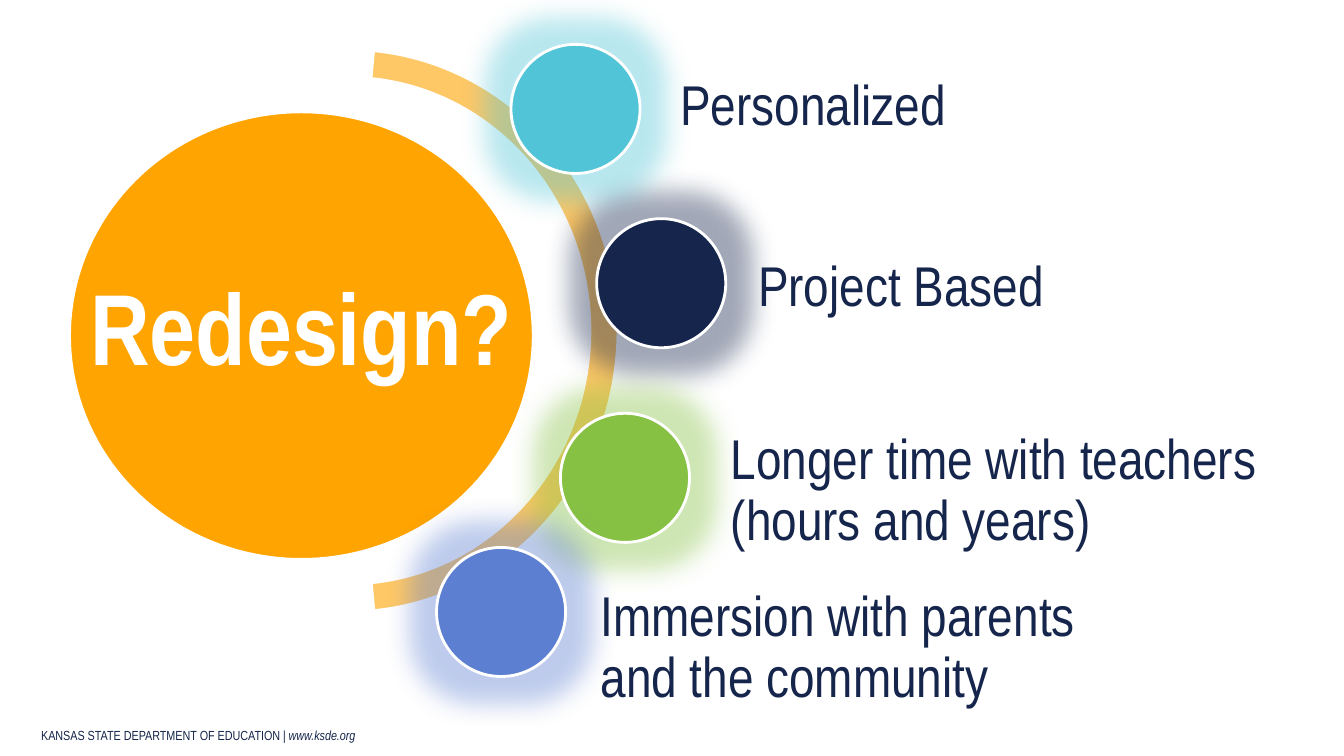
"""Build the Redesign slide: a large titled disc, an arc and four glowing topics."""
from dataclasses import dataclass

from lxml.etree import SubElement
from pptx import Presentation
from pptx.dml.color import RGBColor
from pptx.enum.shapes import MSO_SHAPE
from pptx.enum.text import MSO_ANCHOR, MSO_AUTO_SIZE, PP_ALIGN
from pptx.oxml.ns import qn
from pptx.shapes.autoshape import Shape
from pptx.slide import Slide
from pptx.text.text import TextFrame
from pptx.util import Pt

WHITE = RGBColor(0xFF, 0xFF, 0xFF)
NAVY = RGBColor(0x15, 0x25, 0x4B)
ORANGE = RGBColor(0xFF, 0xA4, 0x00)
LIGHT_ORANGE = RGBColor(0xFF, 0xC8, 0x66)
GREEN = RGBColor(0x86, 0xC1, 0x44)
BLUE = RGBColor(0x5D, 0x7F, 0xD1)
TEAL = RGBColor(0x51, 0xC5, 0xD7)

FONT = "Arial Narrow"
DISC_SIZE = 92.2
LABEL_INSET = 2.9
GLOW_RADIUS = 36


@dataclass(frozen=True)
class Box:
    left: float
    top: float
    width: float
    height: float

    def lengths(self) -> tuple[Pt, Pt, Pt, Pt]:
        return Pt(self.left), Pt(self.top), Pt(self.width), Pt(self.height)


@dataclass(frozen=True)
class Topic:
    text: str
    color: RGBColor
    disc_left: float
    disc_top: float
    label: Box


TITLE_DISC = Box(49.7, 79.9, 331.2, 319.7)
ARC = Box(56.2, 35.3, 385.2, 401.8)
FOOTER = Box(22.3, 515.5, 457.9, 18.7)
TOPICS = [
    Topic("Project Based", NAVY, 426.2, 156.2, Box(538.6, 185, 288, 42.5)),
    Topic("Longer time with teachers (hours and years)", GREEN, 400.3, 295.2,
          Box(519.1, 306.7, 395, 89.3)),
    Topic("Immersion with parents and the community", BLUE, 311.8, 391,
          Box(426.2, 427.7, 347.8, 71.3)),
    Topic("Personalized", TEAL, 365, 31.7, Box(483.1, 55.3, 306, 42.5)),
]


def add_painted(slide: Slide, kind: MSO_SHAPE, box: Box, color: RGBColor) -> Shape:
    s = slide.shapes.add_shape(kind, *box.lengths())
    s.shadow.inherit = False
    s.fill.solid()
    s.fill.fore_color.rgb = color
    s.line.color.rgb = WHITE
    s.line.width = Pt(2)
    return s


def add_glow(s: Shape, color: RGBColor) -> None:
    effects = s.element.spPr.find(qn("a:effectLst"))
    glow = SubElement(effects, qn("a:glow"), rad=str(Pt(GLOW_RADIUS)))
    clr = SubElement(glow, qn("a:srgbClr"), val=str(color))
    SubElement(clr, qn("a:alpha"), val="40000")


def set_frame(tf: TextFrame, inset: float, anchor: MSO_ANCHOR, wrap: bool) -> None:
    tf.auto_size = MSO_AUTO_SIZE.NONE
    tf.word_wrap = wrap
    tf.vertical_anchor = anchor
    tf.margin_left = tf.margin_right = tf.margin_top = tf.margin_bottom = Pt(inset)


def add_run(tf: TextFrame, text: str, size: float, color: RGBColor,
            bold: bool = False, italic: bool = False) -> None:
    r = tf.paragraphs[0].add_run()
    r.text = text
    r.font.name = FONT
    r.font.size = Pt(size)
    r.font.bold = bold
    r.font.italic = italic
    r.font.color.rgb = color


def add_title(slide: Slide) -> None:
    add_painted(slide, MSO_SHAPE.OVAL, TITLE_DISC, ORANGE)
    s = slide.shapes.title
    s.left, s.top, s.width, s.height = TITLE_DISC.lengths()
    s.element.getparent().append(s.element)
    tf = s.text_frame
    set_frame(tf, 0, MSO_ANCHOR.MIDDLE, False)
    p = tf.paragraphs[0]
    p.alignment = PP_ALIGN.CENTER
    p.line_spacing = Pt(72)
    p.space_before = Pt(0)
    add_run(tf, "Redesign?", 72, WHITE, bold=True)


def add_arc(slide: Slide) -> None:
    s = add_painted(slide, MSO_SHAPE.BLOCK_ARC, ARC, LIGHT_ORANGE)
    s.adjustments[0] = 165.09
    s.adjustments[1] = 50.88
    s.adjustments[2] = 0.052


def add_topic(slide: Slide, topic: Topic) -> None:
    disc = Box(topic.disc_left, topic.disc_top, DISC_SIZE, DISC_SIZE)
    s = add_painted(slide, MSO_SHAPE.OVAL, disc, topic.color)
    add_glow(s, topic.color)
    tf = slide.shapes.add_textbox(*topic.label.lengths()).text_frame
    set_frame(tf, LABEL_INSET, MSO_ANCHOR.MIDDLE, True)
    tf.paragraphs[0].line_spacing = 0.9
    add_run(tf, topic.text, 40, NAVY)


def add_footer(slide: Slide) -> None:
    tf = slide.shapes.add_textbox(*FOOTER.lengths()).text_frame
    tf.word_wrap = True
    tf.vertical_anchor = MSO_ANCHOR.BOTTOM
    add_run(tf, "KANSAS STATE DEPARTMENT OF EDUCATION ", 9.4, NAVY)
    add_run(tf, "| www.ksde.org", 9.4, NAVY, italic=True)


def main() -> None:
    prs = Presentation()
    prs.slide_width, prs.slide_height = Pt(960), Pt(540)
    slide = prs.slides.add_slide(prs.slide_layouts[5])
    add_title(slide)
    add_arc(slide)
    for topic in TOPICS:
        add_topic(slide, topic)
    add_footer(slide)
    prs.save("out.pptx")


if __name__ == "__main__":
    main()
